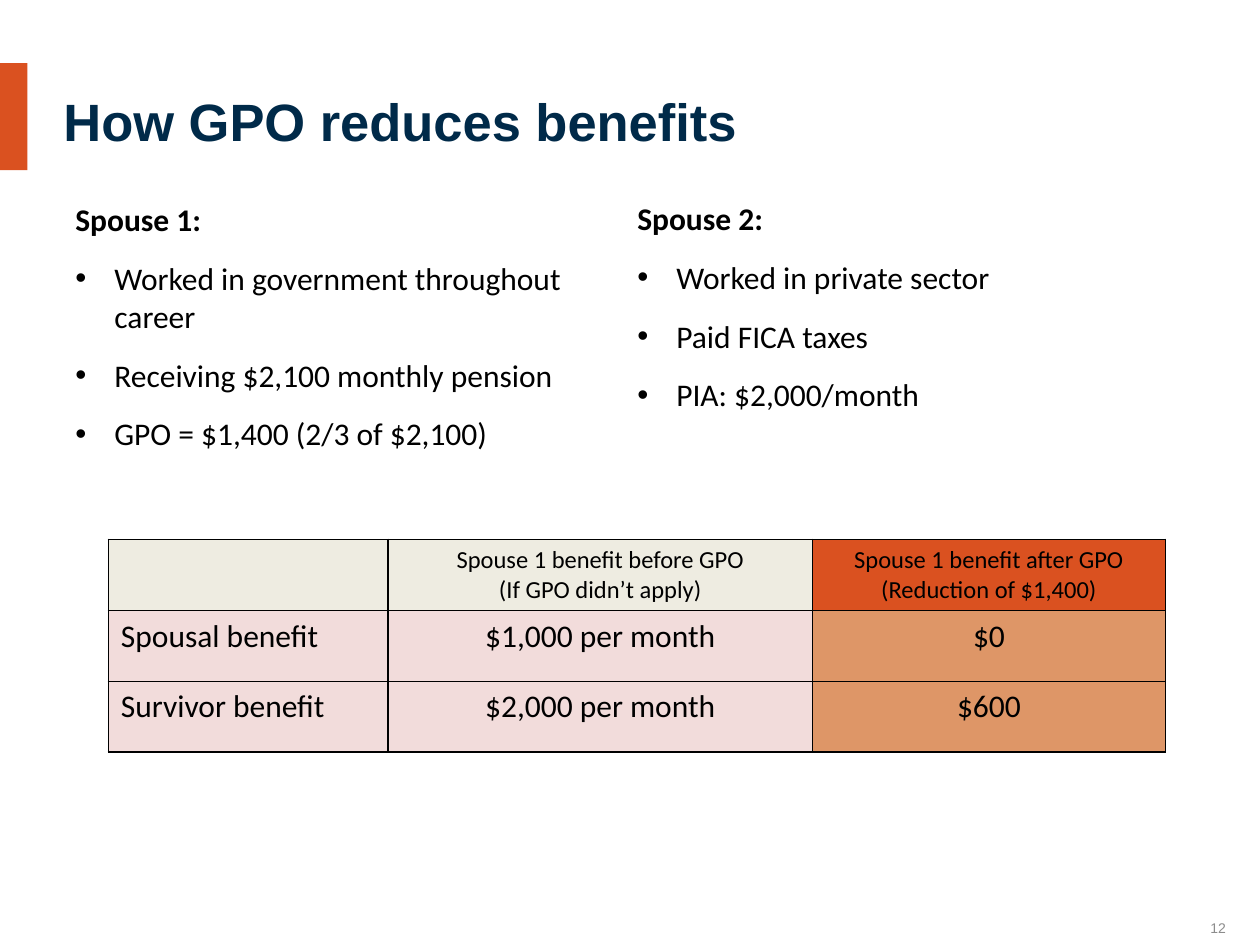
from lxml import etree
from pptx import Presentation
from pptx import util as u
from pptx.dml.color import RGBColor
from pptx.enum import shapes, text
from pptx.oxml.ns import qn

WIDE, HIGH = 10, 7.5
ORANGE, NAVY, GREY, BLACK = "DA5120", "002A49", "8C8C8C", "000000"
CREAM, PINK, TAN = "EEECE1", "F2DCDB", "DE9667"
LEFT, MID, RIGHT = text.PP_ALIGN.LEFT, text.PP_ALIGN.CENTER, text.PP_ALIGN.RIGHT


def color(code):
    return RGBColor.from_string(code)


def place(x, y, w, h):
    """Turn shares of the slide's size into lengths."""
    return [u.Inches(n) for n in (x * WIDE, y * HIGH, w * WIDE, h * HIGH)]


def write(frame, lines, size=18, font="Calibri", ink=BLACK, bold=False,
          align=LEFT, after=0, bullet=False, start=0):
    """Fill the frame with one paragraph a line, from paragraph start on."""
    for i, line in enumerate(lines, start):
        para = frame.paragraphs[0] if i == 0 else frame.add_paragraph()
        para.alignment = align
        para.space_after = u.Pt(after)
        if bullet:
            props = para._p.get_or_add_pPr()
            props.set("marL", str(u.Inches(0.31)))
            props.set("indent", str(-u.Inches(0.31)))
            etree.SubElement(props, qn("a:buFont"), typeface="Arial")
            etree.SubElement(props, qn("a:buChar"), char="•")
        run = para.add_run()
        run.text = line
        run.font.size, run.font.name, run.font.bold = u.Pt(size), font, bold
        run.font.color.rgb = color(ink)


def add_box(slide, box, anchor=text.MSO_ANCHOR.TOP, inset=True):
    frame = slide.shapes.add_textbox(*place(*box)).text_frame
    frame.word_wrap = True
    frame.vertical_anchor = anchor
    if not inset:
        frame.margin_left = frame.margin_right = 0
        frame.margin_top = frame.margin_bottom = 0
    return frame


def add_head(slide, box):
    """Accent bar at the slide's edge, with the title beside it."""
    x, y, w, h = box
    bar = slide.shapes.add_shape(shapes.MSO_SHAPE.RECTANGLE,
                                 *place(x, y, w * 0.023, h))
    bar.shadow.inherit = False
    bar.fill.solid()
    bar.fill.fore_color.rgb = color(ORANGE)
    bar.line.fill.background()
    title = add_box(slide, (x + w * 0.053, y + h * 0.165, w * 0.947, h * 0.74),
                    text.MSO_ANCHOR.MIDDLE, inset=False)
    write(title, ["How GPO reduces benefits"], size=30, font="Arial",
          ink=NAVY, bold=True)


def add_spouse(slide, box, name, facts):
    frame = add_box(slide, box)
    write(frame, [name], bold=True, after=12)
    write(frame, facts, after=12, bullet=True, start=1)


def add_edges(cell):
    props = cell._tc.get_or_add_tcPr()
    for i, side in enumerate(("lnL", "lnR", "lnT", "lnB")):
        edge = etree.Element(qn("a:" + side), w=str(u.Pt(1)))
        fill = etree.SubElement(edge, qn("a:solidFill"))
        etree.SubElement(fill, qn("a:srgbClr"), val=BLACK)
        props.insert(i, edge)


def add_grid(slide, box, shares, rows):
    """Benefit table: header row on top, column widths as shares."""
    area = place(*box)
    grid = slide.shapes.add_table(len(rows), len(shares), *area).table
    for col, share in zip(grid.columns, shares):
        col.width = int(area[2] * share / sum(shares))
    for r, row in enumerate(rows):
        grid.rows[r].height = area[3] // len(rows)
        fills = (PINK, PINK, TAN) if r else (CREAM, CREAM, ORANGE)
        for c, (lines, fill) in enumerate(zip(row, fills)):
            cell = grid.cell(r, c)
            cell.fill.solid()
            cell.fill.fore_color.rgb = color(fill)
            add_edges(cell)
            write(cell.text_frame, lines, size=18 if r else 14,
                  align=MID if c else LEFT)


def add_foot(slide, box):
    frame = add_box(slide, box, text.MSO_ANCHOR.BOTTOM, inset=False)
    write(frame, ["12"], size=8, font="Arial", ink=GREY, align=RIGHT)


def main():
    deck = Presentation()
    deck.slide_width, deck.slide_height = u.Inches(WIDE), u.Inches(HIGH)
    slide = deck.slides.add_slide(deck.slide_layouts[6])

    add_head(slide, (0, 0.5 / HIGH, 0.95, 0.85 / HIGH))

    # Two spouses side by side
    add_spouse(slide, (0.05, 1.54 / HIGH, 0.43, 2.42 / HIGH), "Spouse 1:",
               ["Worked in government throughout career",
                "Receiving $2,100 monthly pension",
                "GPO = $1,400 (2/3 of $2,100)"])
    add_spouse(slide, (0.496, 1.53 / HIGH, 0.43, 1.82 / HIGH), "Spouse 2:",
               ["Worked in private sector", "Paid FICA taxes",
                "PIA: $2,000/month"])

    # Benefits before and after
    add_grid(slide, (0.086, 4.28 / HIGH, 0.839, 1.68 / HIGH),
             (2.22, 3.37, 2.8),
             [([], ["Spouse 1 benefit before GPO", "(If GPO didn’t apply)"],
               ["Spouse 1 benefit after GPO", "(Reduction of $1,400)"]),
              (["Spousal benefit"], ["$1,000 per month"], ["$0"]),
              (["Survivor benefit"], ["$2,000 per month"], ["$600"])])

    add_foot(slide, (0.74, 7.03 / HIGH, 0.233, 0.4 / HIGH))
    deck.save("out.pptx")


if __name__ == "__main__":
    main()
